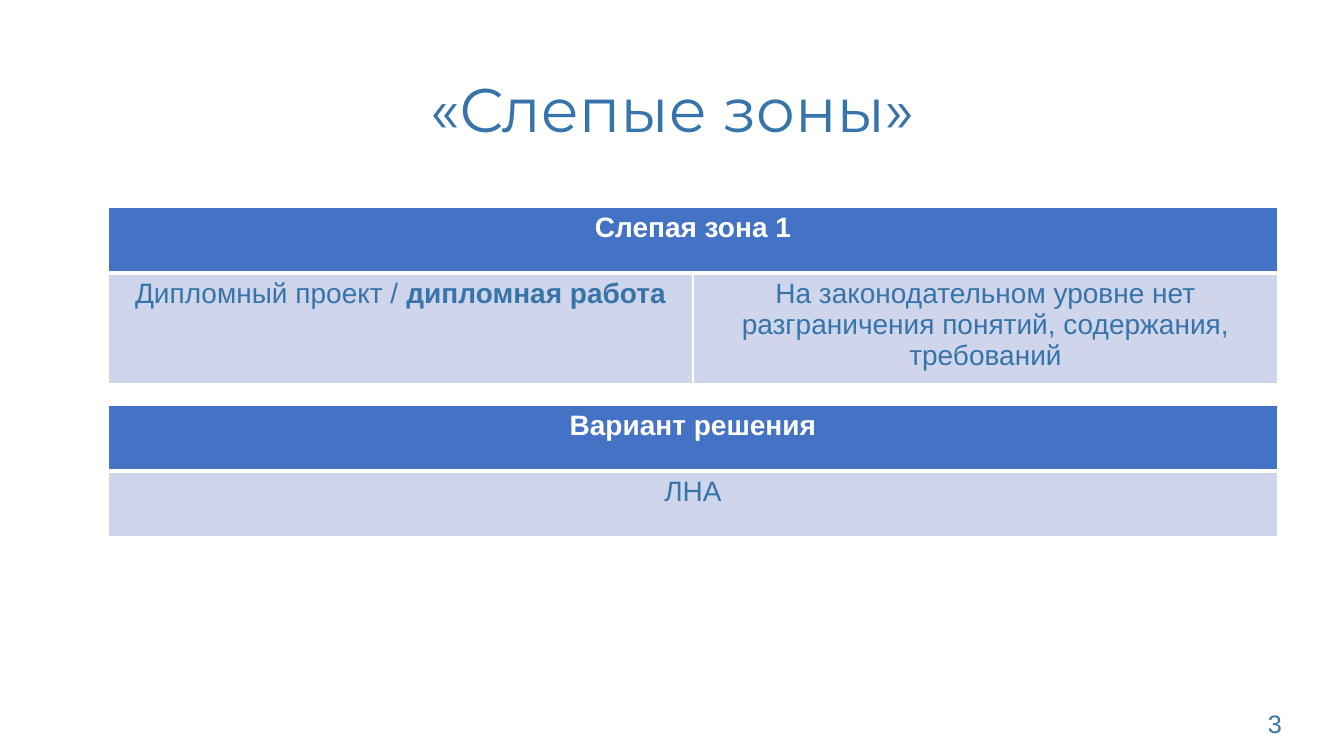
from dataclasses import dataclass

import pptx
import pptx.dml.color
import pptx.enum.text
import pptx.oxml
import pptx.oxml.ns
import pptx.util

SCALE = 914400 / 100.8
ALIGN = pptx.enum.text.PP_ALIGN
ANCHOR = pptx.enum.text.MSO_ANCHOR


@dataclass(frozen=True)
class Theme:
    ink: str = "3774A9"
    white: str = "FFFFFF"
    head: str = "4472C4"
    body: str = "CFD5EA"
    serif: str = "Montserrat"
    sans: str = "Arial"
    big: int = 44
    mid: int = 20
    small: int = 18


def px(n):
    return pptx.util.Emu(round(n * SCALE))


def rgb(code):
    return pptx.dml.color.RGBColor.from_string(code)


def write(frame, text, *, font, size, color, bold=False, align=ALIGN.CENTER, gap=None):
    """Fill a frame with text; parts between ** marks are bold."""
    frame.word_wrap = True
    para = frame.paragraphs[0]
    para.alignment = align
    if gap:
        para.line_spacing = gap
    for i, part in enumerate(text.split("**")):
        if part:
            run = para.add_run()
            run.text = part
            run.font.name = font
            run.font.size = pptx.util.Pt(size)
            run.font.bold = bold or i % 2 == 1
            run.font.color.rgb = rgb(color)


class Deck:
    def __init__(self, theme):
        self.theme = theme
        self.show = pptx.Presentation()
        self.show.slide_width = px(1344)
        self.show.slide_height = px(756)
        self.slide = self.show.slides.add_slide(self.show.slide_layouts[5])

    def title(self, text, x, y, w, h):
        t = self.theme
        box = self.slide.shapes.title
        box.left, box.top, box.width, box.height = map(px, (x, y, w, h))
        frame = box.text_frame
        frame.auto_size = pptx.enum.text.MSO_AUTO_SIZE.NONE
        frame.vertical_anchor = ANCHOR.MIDDLE
        write(frame, text, font=t.serif, size=t.big, color=t.ink, gap=0.9)

    def label(self, text, x, y, w, h):
        t = self.theme
        box = self.slide.shapes.add_textbox(*map(px, (x, y, w, h)))
        write(box.text_frame, text, font=t.sans, size=t.small, color=t.ink,
              align=ALIGN.LEFT)

    def edge(self, cell, side, width):
        props = cell._tc.get_or_add_tcPr()
        props.append(pptx.oxml.parse_xml(
            f'<a:ln{side} {pptx.oxml.ns.nsdecls("a")} w="{pptx.util.Pt(width)}">'
            f'<a:solidFill><a:srgbClr val="{self.theme.white}"/></a:solidFill>'
            f'</a:ln{side}>'))

    def table(self, head, items, x, y, w, rows):
        """Draw a heading row across the full width, then a row of items."""
        t = self.theme
        cols = len(items)
        grid = self.slide.shapes.add_table(
            2, cols, *map(px, (x, y, w, sum(rows)))).table
        for row, high in zip(grid.rows, rows):
            row.height = px(high)
        for col in grid.columns:
            col.width = px(w // cols)

        # Borders come before fills
        for r in range(2):
            for c in range(cols):
                cell = grid.cell(r, c)
                cell.margin_left = cell.margin_right = px(5)
                cell.margin_top = cell.margin_bottom = px(5)
                for side in "LRTB":
                    thick = (r, side) in ((0, "B"), (1, "T"))
                    self.edge(cell, side, 3 if thick else 1)
                cell.fill.solid()
                cell.fill.fore_color.rgb = rgb(t.body if r else t.head)

        # Wording
        if cols > 1:
            grid.cell(0, 0).merge(grid.cell(0, cols - 1))
        write(grid.cell(0, 0).text_frame, head, font=t.sans, size=t.mid,
              color=t.white, bold=True)
        for c, item in enumerate(items):
            write(grid.cell(1, c).text_frame, item, font=t.sans, size=t.mid,
                  color=t.ink)


def main():
    deck = Deck(Theme())

    # Heading and page number
    deck.title("«Слепые зоны»", 93, 40, 1159, 146)
    deck.label("3", 1258, 703, 70, 40)

    # Problem and solution
    deck.table("Слепая зона 1",
               ["Дипломный проект / **дипломная работа**",
                "На законодательном уровне нет разграничения понятий, "
                "содержания, требований"],
               108, 207, 1170, (66, 103))
    deck.table("Вариант решения", ["ЛНА"], 108, 405, 1170, (66, 66))

    deck.show.save("out.pptx")


if __name__ == "__main__":
    main()
